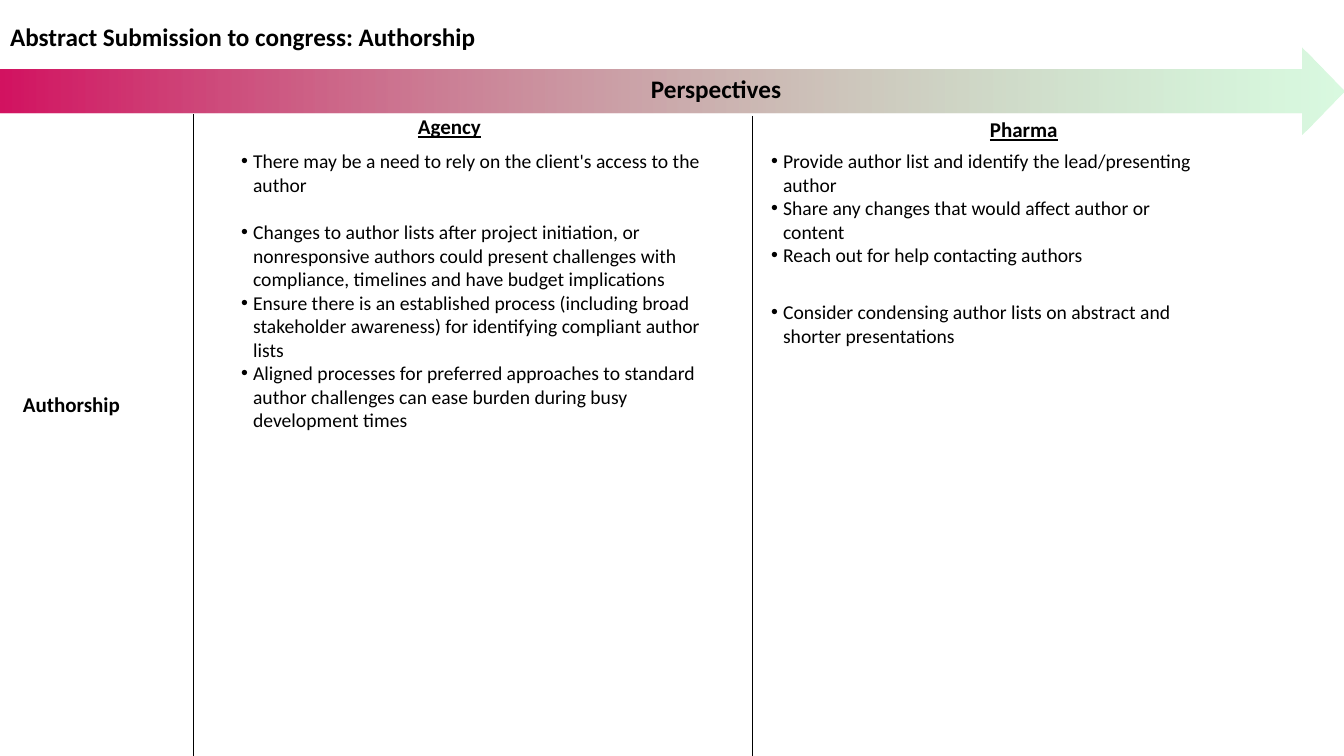
"""Build the slide on authorship in abstract submission, seen by agency and pharma."""
from dataclasses import dataclass

from lxml import etree
from pptx import Presentation
from pptx.dml.color import RGBColor
from pptx.enum.dml import MSO_THEME_COLOR
from pptx.enum.shapes import MSO_CONNECTOR, MSO_SHAPE
from pptx.enum.text import MSO_ANCHOR, MSO_AUTO_SIZE, PP_ALIGN
from pptx.oxml.ns import qn
from pptx.shapes.autoshape import Shape
from pptx.slide import Slide
from pptx.text.text import TextFrame, _Paragraph
from pptx.util import Emu, Pt

RIGHT_ARROW = MSO_SHAPE.RIGHT_ARROW
STRAIGHT = MSO_CONNECTOR.STRAIGHT
TOP = MSO_ANCHOR.TOP
NO_AUTOFIT = MSO_AUTO_SIZE.NONE
LEFT = PP_ALIGN.LEFT
WIDTH, HEIGHT = 1344, 756
SCALE = 12192000 / WIDTH
TWO_CONTENT_LAYOUT = 3


@dataclass(frozen=True)
class Theme:
    font: str = "Calibri"
    text: RGBColor = RGBColor(0x00, 0x00, 0x00)
    arrow_start: RGBColor = RGBColor(0xD3, 0x13, 0x61)
    arrow_end: RGBColor = RGBColor(0x94, 0xF0, 0xA8)
    arrow_end_alpha: int = 35
    title_size: int = 18
    heading_size: int = 15
    body_size: int = 14
    line_width: float = 0.5
    bullet_indent: int = 12


@dataclass(frozen=True)
class Box:
    left: int
    top: int
    width: int
    height: int

    def emu(self) -> tuple[Emu, Emu, Emu, Emu]:
        return px(self.left), px(self.top), px(self.width), px(self.height)


@dataclass(frozen=True)
class Label:
    text: str
    box: Box
    size: int
    underline: bool = False


@dataclass(frozen=True)
class Column:
    heading: Label
    box: Box
    bullets: tuple[str, ...]
    gap_before: int
    gap_points: int
    divider_left: int
    divider_top: int


THEME = Theme()
ARROW = Box(0, 48, WIDTH, 86)
TITLE = Label("Abstract Submission to congress: Authorship", Box(0, 16, 1123, 40), THEME.title_size)
LABELS = (
    Label("Perspectives", Box(641, 68, 420, 72), THEME.title_size),
    Label("Authorship", Box(13, 387, 170, 35), THEME.heading_size),
)
COLUMNS = (
    Column(
        Label("Agency", Box(408, 109, 147, 35), THEME.heading_size, True),
        Box(231, 144, 510, 343),
        (
            "There may be a need to rely on the client's access to the author",
            "Changes to author lists after project initiation, or nonresponsive authors "
            "could present challenges with compliance, timelines and have budget implications",
            "Ensure there is an established process (including broad stakeholder awareness) "
            "for identifying compliant author lists",
            "Aligned processes for preferred approaches to standard author challenges "
            "can ease burden during busy development times",
        ),
        gap_before=1, gap_points=17, divider_left=193, divider_top=114,
    ),
    Column(
        Label("Pharma", Box(980, 112, 164, 35), THEME.heading_size, True),
        Box(761, 144, 452, 234),
        (
            "Provide author list and identify the lead/presenting author",
            "Share any changes that would affect author or content",
            "Reach out for help contacting authors",
            "Consider condensing author lists on abstract and shorter presentations",
        ),
        gap_before=3, gap_points=24, divider_left=752, divider_top=116,
    ),
)


def px(length: int) -> Emu:
    return Emu(round(length * SCALE))


def place(shape: Shape, box: Box) -> TextFrame:
    shape.left, shape.top, shape.width, shape.height = box.emu()
    frame = shape.text_frame
    frame.word_wrap = True
    frame.auto_size = NO_AUTOFIT
    frame.vertical_anchor = TOP
    return frame


def style(paragraph: _Paragraph, size: int, bold: bool = False, underline: bool = False) -> None:
    paragraph.alignment = LEFT
    paragraph.space_before = Pt(0)
    font = paragraph.font
    font.name, font.size, font.bold, font.underline = THEME.font, Pt(size), bold, underline
    font.color.rgb = THEME.text


def write_label(shape: Shape, label: Label) -> None:
    paragraph = place(shape, label.box).paragraphs[0]
    paragraph.text = label.text
    style(paragraph, label.size, True, label.underline)


def add_label(slide: Slide, label: Label) -> None:
    write_label(slide.shapes.add_textbox(*label.box.emu()), label)


def set_bullet(paragraph: _Paragraph) -> None:
    properties = paragraph._p.get_or_add_pPr()
    indent = px(THEME.bullet_indent)
    properties.set("marL", str(indent))
    properties.set("indent", str(-indent))
    bullet = etree.Element(qn("a:buChar"), char="•")
    properties.find(qn("a:defRPr")).addprevious(bullet)


def write_bullets(shape: Shape, column: Column) -> None:
    frame = place(shape, column.box)
    for index, text in enumerate(column.bullets):
        paragraph = frame.add_paragraph() if index else frame.paragraphs[0]
        paragraph.text = text
        style(paragraph, THEME.body_size)
        set_bullet(paragraph)
        if index == column.gap_before:
            paragraph.space_before = Pt(column.gap_points)


def add_divider(slide: Slide, left: int, top: int) -> None:
    divider = slide.shapes.add_connector(STRAIGHT, px(left), px(top), px(left), px(HEIGHT))
    divider.line.color.rgb = THEME.text
    divider.line.width = Pt(THEME.line_width)
    etree.SubElement(divider._element.spPr, qn("a:effectLst"))


def add_arrow(slide: Slide) -> None:
    arrow = slide.shapes.add_shape(RIGHT_ARROW, *ARROW.emu())
    arrow.shadow.inherit = False
    arrow.line.fill.background()
    arrow.fill.gradient()
    arrow.fill.gradient_angle = 0
    for stop, color in zip(arrow.fill.gradient_stops, (THEME.arrow_start, THEME.arrow_end)):
        stop.color.rgb = color
    end_color = arrow._element.spPr.findall(".//" + qn("a:gs"))[-1].find(qn("a:srgbClr"))
    etree.SubElement(end_color, qn("a:alpha"), val=str(THEME.arrow_end_alpha * 1000))


def main() -> None:
    presentation = Presentation()
    presentation.slide_width, presentation.slide_height = px(WIDTH), px(HEIGHT)
    slide = presentation.slides.add_slide(presentation.slide_layouts[TWO_CONTENT_LAYOUT])
    slide.background.fill.solid()
    slide.background.fill.fore_color.theme_color = MSO_THEME_COLOR.BACKGROUND_1
    add_arrow(slide)
    write_label(slide.shapes.title, TITLE)
    for label in LABELS:
        add_label(slide, label)
    for index, column in enumerate(COLUMNS, start=1):
        add_label(slide, column.heading)
        add_divider(slide, column.divider_left, column.divider_top)
        write_bullets(slide.placeholders[index], column)
    presentation.save("out.pptx")


if __name__ == "__main__":
    main()
